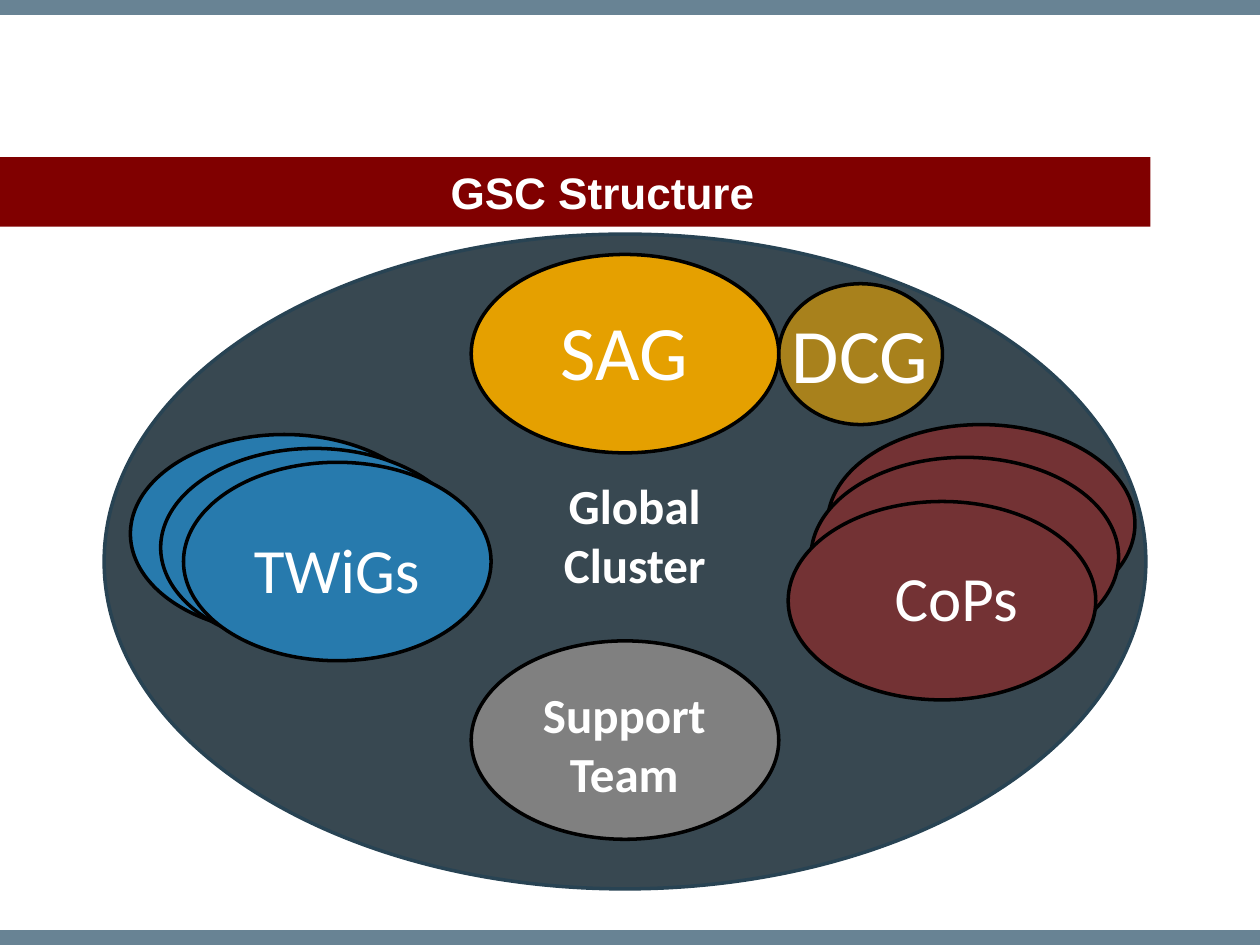
from lxml import etree
from pptx import Presentation
from pptx.dml.color import RGBColor
from pptx.enum.shapes import MSO_SHAPE
from pptx.enum.text import MSO_ANCHOR, PP_ALIGN
from pptx.oxml.ns import qn
from pptx.util import Cm, Pt

WHITE = RGBColor(0xFF, 0xFF, 0xFF)
BLACK = RGBColor(0x00, 0x00, 0x00)
SLATE = RGBColor(0x68, 0x83, 0x94)
MAROON = RGBColor(0x80, 0x00, 0x00)
NAVY = RGBColor(0x1B, 0x2D, 0x38)
NAVY_EDGE = RGBColor(0x28, 0x43, 0x53)
AMBER = RGBColor(0xE5, 0xA0, 0x00)
BLUE = RGBColor(0x27, 0x7A, 0xAD)
WINE = RGBColor(0x73, 0x32, 0x34)
GREY = RGBColor(0x80, 0x80, 0x80)

GROUP_W, GROUP_H = 6.2, 4


def add_shape(slide, kind, x, y, w, h, fill, line=None, alpha=None):
    sp = slide.shapes.add_shape(kind, Cm(x), Cm(y), Cm(w), Cm(h))
    sp.shadow.inherit = False
    sp.fill.solid()
    sp.fill.fore_color.rgb = fill
    if alpha is not None:
        clr = sp.fill._xPr.find(qn("a:solidFill"))[0]
        etree.SubElement(clr, qn("a:alpha"), val=str(alpha * 1000))
    if line is None:
        sp.line.fill.background()
    else:
        sp.line.color.rgb = line
        sp.line.width = Pt(2)
    return sp


def add_label(slide, x, y, w, h, lines, size, bold=False, font="Calibri",
              anchor=MSO_ANCHOR.TOP):
    tf = slide.shapes.add_textbox(Cm(x), Cm(y), Cm(w), Cm(h)).text_frame
    tf.word_wrap = True
    tf.vertical_anchor = anchor
    for i, text in enumerate(lines):
        p = tf.add_paragraph() if i else tf.paragraphs[0]
        p.alignment = PP_ALIGN.CENTER
        r = p.add_run()
        r.text = text
        r.font.name = font
        r.font.size = Pt(size)
        r.font.bold = bold
        r.font.color.rgb = WHITE


def edge_bars(slide, x, y, w, h):
    for top in (y, y + h - 0.3):
        add_shape(slide, MSO_SHAPE.RECTANGLE, x, top, w, 0.3, SLATE)


def title_band(slide, x, y, w, h):
    add_shape(slide, MSO_SHAPE.RECTANGLE, x, y, w, h, MAROON)
    add_label(slide, x + 1.1, y, w - 1.1, h, ["GSC Structure"], 25.2, True,
              "Arial", MSO_ANCHOR.MIDDLE)


def cluster(slide, x, y, w, h):
    def oval(dx, dy, fill, ow=GROUP_W, oh=GROUP_H, alpha=None):
        add_shape(slide, MSO_SHAPE.OVAL, x + dx, y + dy, ow, oh, fill, BLACK, alpha)

    def label(dx, dy, lw, lh, lines, size, bold=False):
        add_label(slide, x + dx, y + dy, lw, lh, lines, size, bold)

    add_shape(slide, MSO_SHAPE.OVAL, x, y, w, h, NAVY, NAVY_EDGE, 87)

    # Advisory group, its neighbour and the support team
    middle = (w - GROUP_W) / 2
    oval(middle, 0.41, AMBER)
    oval(middle + GROUP_W, 1, AMBER, 3.3, 2.84, 65)
    oval(middle, 8.2, GREY)
    label(8.58, 1.27, 3.81, 2.13, ["SAG"], 44)
    label(13.33, 1.33, 3.81, 2.13, ["DCG"], 44)
    label(8.58, 8.95, 3.81, 2.64, ["Support", "Team"], 28, True)

    # Stacked groups on either side
    for dx, dy in ((0.53, 4.04), (1.14, 4.32), (1.6, 4.6)):
        oval(dx, dy, BLUE)
    label(2.67, 5.85, 4.04, 1.8, ["TWiGs"], 36)
    for dx, dy in ((14.58, 3.84), (14.25, 4.5), (13.79, 5.39)):
        oval(dx, dy, WINE)
    label(14.98, 6.41, 4.39, 1.8, ["CoPs"], 36)

    # Centre
    label(7.8, 4.75, 5.79, 2.64, ["Global Cluster"], 28, True)


def main():
    prs = Presentation()
    prs.slide_width, prs.slide_height = Cm(25.4), Cm(19.05)
    slide = prs.slides.add_slide(prs.slide_layouts[6])
    edge_bars(slide, 0, 0, 25.4, 19.05)
    title_band(slide, 0, 3.17, 23.19, 1.4)
    cluster(slide, 2.1, 4.72, 21, 13.2)
    prs.save("out.pptx")


if __name__ == "__main__":
    main()
